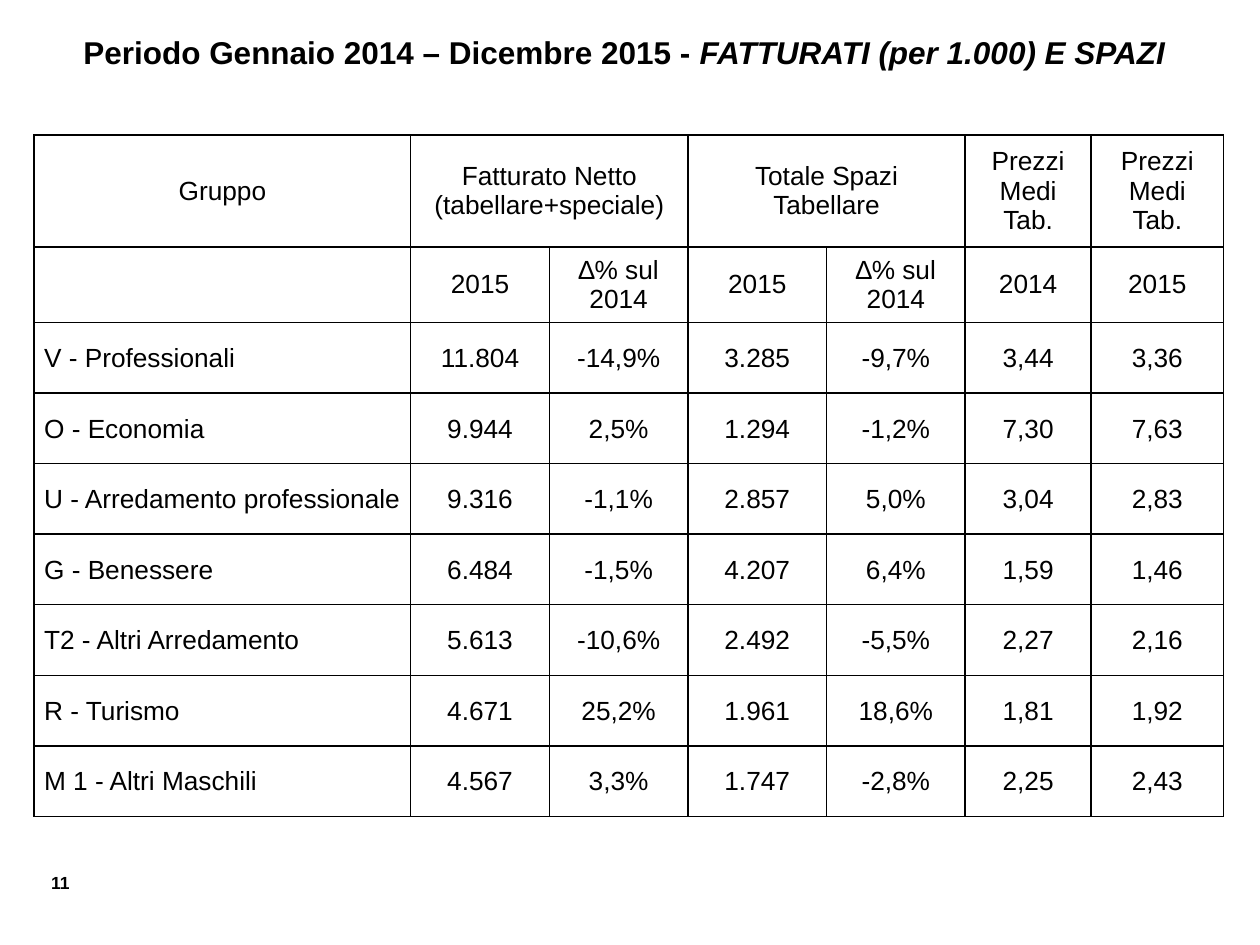
import dataclasses
import typing

import lxml.etree
import pptx
import pptx.dml.color
import pptx.enum.text
import pptx.oxml.ns
import pptx.util

Inches = pptx.util.Inches
ALIGN = pptx.enum.text.PP_ALIGN
ANCHOR = pptx.enum.text.MSO_ANCHOR
COLORS = {"ink": "000000", "paper": "FFFFFF"}
FONT = "Arial"


@dataclasses.dataclass
class Box:
    left: float
    top: float
    width: float
    height: float


@dataclasses.dataclass
class Group:
    name: str
    sales: str
    sales_diff: str
    space: str
    space_diff: str
    price_old: str
    price_new: str


HEADS = ["Gruppo", "Fatturato Netto (tabellare+speciale)", "",
         "Totale Spazi Tabellare", "", "Prezzi Medi Tab.", "Prezzi Medi Tab."]
YEARS = ["", "2015", "∆% sul 2014", "2015", "∆% sul 2014", "2014", "2015"]
GROUPS = [
    Group("V - Professionali", "11.804", "-14,9%", "3.285", "-9,7%", "3,44", "3,36"),
    Group("O - Economia", "9.944", "2,5%", "1.294", "-1,2%", "7,30", "7,63"),
    Group("U - Arredamento professionale", "9.316", "-1,1%", "2.857", "5,0%", "3,04", "2,83"),
    Group("G - Benessere", "6.484", "-1,5%", "4.207", "6,4%", "1,59", "1,46"),
    Group("T2 - Altri Arredamento", "5.613", "-10,6%", "2.492", "-5,5%", "2,27", "2,16"),
    Group("R - Turismo", "4.671", "25,2%", "1.961", "18,6%", "1,81", "1,92"),
    Group("M 1 - Altri Maschili", "4.567", "3,3%", "1.747", "-2,8%", "2,25", "2,43"),
]
WIDTHS = [2.99, 1.1, 1.1, 1.1, 1.1, 1, 1.05]
HEIGHTS = [0.89, 0.6] + [0.56] * len(GROUPS)


def write(para: typing.Any, text: str, size: float = 15, bold: bool = False,
          italic: bool = False, align: ALIGN = ALIGN.CENTER) -> None:
    """Add one run to the paragraph."""
    para.alignment = align
    run = para.add_run()
    run.text = text
    font = run.font
    font.name, font.size = FONT, pptx.util.Pt(size)
    font.bold, font.italic = bold, italic
    font.color.rgb = pptx.dml.color.RGBColor.from_string(COLORS["ink"])


def add_text(slide: typing.Any, box: Box) -> typing.Any:
    """Add a wrapping text box and return its first paragraph."""
    shape = slide.shapes.add_textbox(Inches(box.left), Inches(box.top),
                                     Inches(box.width), Inches(box.height))
    shape.text_frame.word_wrap = True
    return shape.text_frame.paragraphs[0]


def add_edges(cell: typing.Any) -> None:
    props = cell._tc.get_or_add_tcPr()
    qn = pptx.oxml.ns.qn
    for place, side in enumerate(["lnL", "lnR", "lnT", "lnB"]):
        line = lxml.etree.Element(qn("a:" + side), w=str(pptx.util.Pt(1)))
        fill = lxml.etree.SubElement(line, qn("a:solidFill"))
        lxml.etree.SubElement(fill, qn("a:srgbClr"), val=COLORS["ink"])
        props.insert(place, line)


def style_cell(cell: typing.Any, side: float, top: float, bottom: float) -> None:
    cell.fill.solid()
    cell.fill.fore_color.rgb = pptx.dml.color.RGBColor.from_string(COLORS["paper"])
    cell.vertical_anchor = ANCHOR.MIDDLE
    cell.margin_left = cell.margin_right = Inches(side)
    cell.margin_top, cell.margin_bottom = Inches(top), Inches(bottom)
    add_edges(cell)


def add_grid(slide: typing.Any, left: float, top: float) -> None:
    rows = [HEADS, YEARS] + [list(dataclasses.astuple(group)) for group in GROUPS]
    frame = slide.shapes.add_table(len(rows), len(WIDTHS), Inches(left), Inches(top),
                                   Inches(sum(WIDTHS)), Inches(sum(HEIGHTS)))
    table = frame.table
    for col, width in zip(table.columns, WIDTHS):
        col.width = Inches(width)
    for row, height in zip(table.rows, HEIGHTS):
        row.height = Inches(height)
    for first in (1, 3):
        table.cell(0, first).merge(table.cell(0, first + 1))
    for r, row in enumerate(rows):
        for c, text in enumerate(row):
            cell = table.cell(r, c)
            name = r > 1 and c == 0
            if r < 2:
                style_cell(cell, 0.1, 0.05, 0.05)
            else:
                style_cell(cell, 0.08 if name else 0.01, 0.01, 0)
            if text:
                write(cell.text_frame.paragraphs[0], text,
                      align=ALIGN.LEFT if name else ALIGN.CENTER)


def main() -> None:
    deck = pptx.Presentation()
    deck.slide_width, deck.slide_height = Inches(10), Inches(7.5)
    slide = deck.slides.add_slide(deck.slide_layouts[6])
    page = add_text(slide, Box(0.19, 6.87, 0.46, 0.27))
    write(page, "11", size=10, bold=True, align=ALIGN.RIGHT)
    title = add_text(slide, Box(0.27, 0.21, 9.37, 0.71))
    write(title, "Periodo Gennaio 2014 – Dicembre 2015 - ", size=18, bold=True)
    write(title, "FATTURATI (per 1.000) E SPAZI", size=18, bold=True, italic=True)
    add_grid(slide, 0.27, 1.07)
    deck.save("out.pptx")


if __name__ == "__main__":
    main()
